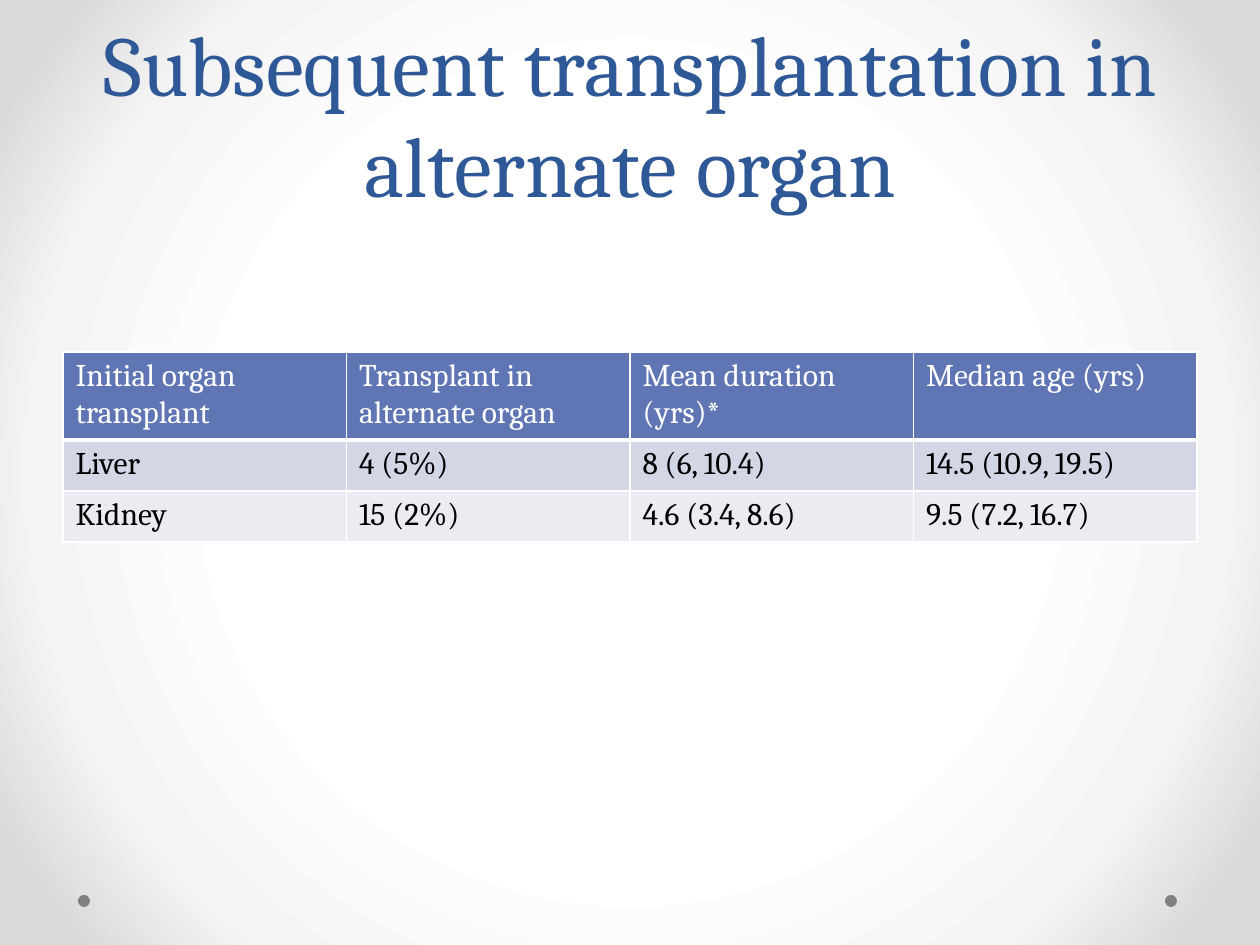
"""Build the slide on subsequent transplantation in the alternate organ."""
from pptx import Presentation
from pptx.dml.color import RGBColor as RGB
from pptx.enum.shapes import MSO_SHAPE as SHAPE
from pptx.enum.text import MSO_ANCHOR as ANCHOR, MSO_AUTO_SIZE as AUTOSIZE, PP_ALIGN as ALIGN
from pptx.oxml import parse_xml
from pptx.oxml.ns import nsdecls
from pptx.util import Emu, Pt

TITLE = "Subsequent transplantation in alternate organ"
ROWS = [
    ("Initial organ transplant", "Transplant in alternate organ",
     "Mean duration (yrs)*", "Median age (yrs)"),
    ("Liver", "4 (5%)", "8 (6, 10.4)", "14.5 (10.9, 19.5)"),
    ("Kidney", "15 (2%)", "4.6 (3.4, 8.6)", "9.5 (7.2, 16.7)"),
]

WHITE = RGB(0xFF, 0xFF, 0xFF)
BLACK = RGB(0x00, 0x00, 0x00)
GREY = RGB(0x80, 0x80, 0x80)
TITLE_BLUE = RGB(0x2F, 0x58, 0x97)
HEADER_BLUE = RGB(0x60, 0x76, 0xB4)
BAND_DARK = RGB(0xD2, 0xD6, 0xE5)
BAND_LIGHT = RGB(0xEA, 0xEC, 0xF2)
GLOW = [(50, WHITE), (76, RGB(0xF4, 0xF4, 0xF4)), (92, RGB(0xDA, 0xDA, 0xDA))]

ROW_STYLES = [(88, HEADER_BLUE, WHITE, 3), (51, BAND_DARK, BLACK, 1), (51, BAND_LIGHT, BLACK, 1)]
FONT = "Cambria"
SLIDE_SIZE = (1260, 945)
TITLE_BOX = (63, 0, 1134, 221)
TABLE_BOX = (63, 352, 1134, sum(style[0] for style in ROW_STYLES))
DOT_LEFTS = (1165, 78)
DOT_TOP, DOT_SIZE = 895, 12


def px(*lengths):
    return [Emu(round(length * 914400 / 126)) for length in lengths]


def set_format(target, values):
    for name, value in values.items():
        setattr(target, name, value)


def write(frame, text, size, color, **paragraph_format):
    para = frame.paragraphs[0]
    set_format(para, paragraph_format)
    span = para.add_run()
    span.text = text
    set_format(span.font, {"name": FONT, "size": Pt(size), "bold": False})
    span.font.color.rgb = color


def paint_background(slide):
    stops = "".join(f'<a:gs pos="{position * 1000}"><a:srgbClr val="{color}"/></a:gs>'
                    for position, color in GLOW)
    slide.element.cSld.insert(0, parse_xml(
        f'<p:bg {nsdecls("p", "a")}><p:bgPr><a:gradFill rotWithShape="1">'
        f'<a:gsLst>{stops}</a:gsLst><a:path path="circle">'
        '<a:fillToRect l="50000" t="50000" r="50000" b="50000"/></a:path>'
        '</a:gradFill><a:effectLst/></p:bgPr></p:bg>'))


def add_borders(cell, bottom):
    widths = {"lnL": 1, "lnR": 1, "lnT": 1, "lnB": bottom}
    properties = cell._tc.get_or_add_tcPr()
    for index, (side, width) in enumerate(widths.items()):
        properties.insert(index, parse_xml(
            f'<a:{side} {nsdecls("a")} w="{Pt(width)}"><a:solidFill>'
            f'<a:srgbClr val="{WHITE}"/></a:solidFill></a:{side}>'))


def add_dot(slide, left):
    dot = slide.shapes.add_shape(SHAPE.OVAL, *px(left, DOT_TOP, DOT_SIZE, DOT_SIZE))
    dot.shadow.inherit = False
    dot.fill.solid()
    dot.fill.fore_color.rgb = GREY
    dot.line.fill.background()


def add_title(slide):
    title = slide.shapes.title
    set_format(title, dict(zip(("left", "top", "width", "height"), px(*TITLE_BOX))))
    set_format(title.text_frame, {"word_wrap": True, "auto_size": AUTOSIZE.NONE,
                                  "vertical_anchor": ANCHOR.BOTTOM})
    write(title.text_frame, TITLE, 48.6, TITLE_BLUE,
          alignment=ALIGN.CENTER, line_spacing=Pt(58))


def add_results(slide):
    table = slide.shapes.add_table(len(ROWS), len(ROWS[0]), *px(*TABLE_BOX)).table
    for row, texts, (height, fill, color, bottom) in zip(table.rows, ROWS, ROW_STYLES):
        row.height = px(height)[0]
        for cell, text in zip(row.cells, texts):
            cell.fill.solid()
            cell.fill.fore_color.rgb = fill
            write(cell.text_frame, text, 18, color)
            add_borders(cell, bottom)


def main():
    deck = Presentation()
    deck.slide_width, deck.slide_height = px(*SLIDE_SIZE)
    slide = deck.slides.add_slide(deck.slide_layouts[5])
    paint_background(slide)
    for left in DOT_LEFTS:
        add_dot(slide, left)
    add_title(slide)
    add_results(slide)
    deck.save("out.pptx")


if __name__ == "__main__":
    main()
